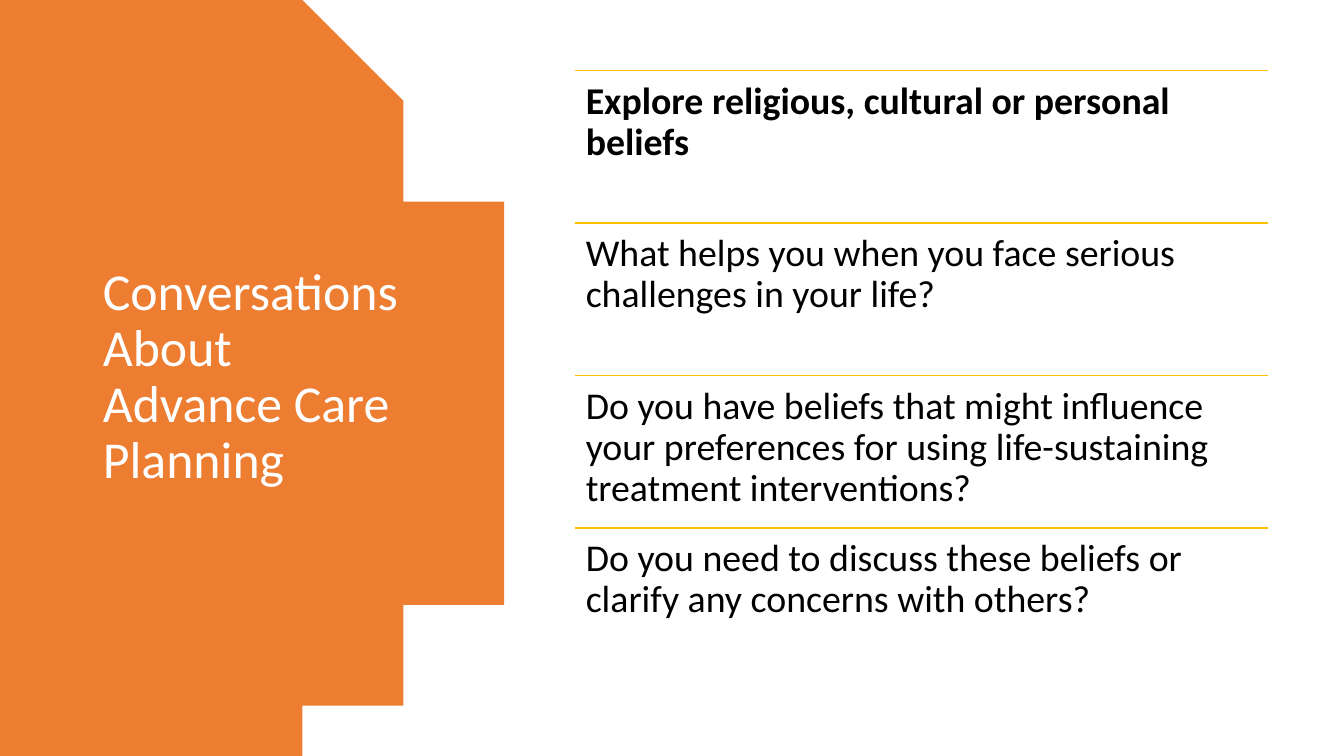
import dataclasses

import pptx
import pptx.dml.color
import pptx.enum.shapes
import pptx.enum.text
import pptx.oxml
import pptx.oxml.ns
import pptx.util
from pptx.util import Inches


@dataclasses.dataclass(frozen=True)
class Theme:
    """Hold the colours, font and type sizes of the slide."""
    disc: str = "ED7D31"
    rule: str = "FFC000"
    light: str = "FFFFFF"
    dark: str = "000000"
    font: str = "Calibri"
    head: int = 37
    body: int = 27


THEME = Theme()
TITLE = "Conversations About Advance Care Planning"
ITEMS = [
    "Explore religious, cultural or personal beliefs",
    "What helps you when you face serious challenges in your life?",
    "Do you have beliefs that might influence your preferences for using "
    "life-sustaining treatment interventions?",
    "Do you need to discuss these beliefs or clarify any concerns with others?",
]
LEFT, TOP, WIDTH, PITCH = 5.7, 0.7, 6.88, 1.513


def paint(code):
    """Turn a hex code into a colour."""
    return pptx.dml.color.RGBColor.from_string(code)


def style(frame, size, code, bold=False):
    """Format the text of a frame."""
    frame.word_wrap = True
    for para in frame.paragraphs:
        para.line_spacing = 0.9
        for run in para.runs:
            run.font.name = THEME.font
            run.font.size = pptx.util.Pt(size)
            run.font.bold = bold
            run.font.color.rgb = paint(code)


def curve(start, pull, push, end, steps=40):
    """Sample a cubic curve between two points."""
    spots = []
    for step in range(steps + 1):
        t = step / steps
        u = 1 - t
        mix = (u ** 3, 3 * u * u * t, 3 * u * t * t, t ** 3)
        spots.append(tuple(
            sum(m * p[axis] for m, p in zip(mix, (start, pull, push, end)))
            for axis in (0, 1)))
    return spots


def add_disc(slide):
    """Draw the cut disc behind the title."""
    upper = curve((2.83, 0), (4.09, 0.77), (4.93, 2.16), (4.93, 3.75))
    lower = [(x, 7.5 - y) for x, y in reversed(upper[:-1])]
    build = slide.shapes.build_freeform(0, 0, scale=Inches(1))
    build.add_line_segments(upper + lower + [(0, 7.5)], close=True)
    disc = build.convert_to_shape()
    disc.shadow.inherit = False
    disc.fill.solid()
    disc.fill.fore_color.rgb = paint(THEME.disc)
    disc.line.fill.background()
    slide.shapes.element.insert(2, disc.element)


def add_title(slide):
    """Place and format the title."""
    title = slide.shapes.title
    title.left, title.top = Inches(0.92), Inches(0.7)
    title.width, title.height = Inches(3.23), Inches(6.09)
    frame = title.text_frame
    frame.text = TITLE
    frame.vertical_anchor = pptx.enum.text.MSO_ANCHOR.MIDDLE
    style(frame, THEME.head, THEME.light)
    frame.paragraphs[0].alignment = pptx.enum.text.PP_ALIGN.LEFT


def add_rule(slide, top):
    """Draw a thin line above an item."""
    rule = slide.shapes.add_connector(
        pptx.enum.shapes.MSO_CONNECTOR.STRAIGHT,
        Inches(LEFT), Inches(top), Inches(LEFT + WIDTH), Inches(top))
    rule.line.color.rgb = paint(THEME.rule)
    rule.line.width = pptx.util.Pt(1)
    props = rule.element.find(pptx.oxml.ns.qn("p:spPr"))
    props.append(pptx.oxml.parse_xml(
        "<a:effectLst %s/>" % pptx.oxml.ns.nsdecls("a")))


def add_item(slide, text, top, bold):
    """Write one item below its line."""
    box = slide.shapes.add_textbox(
        Inches(LEFT), Inches(top), Inches(WIDTH), Inches(PITCH))
    frame = box.text_frame
    frame.margin_left = frame.margin_right = Inches(0.11)
    frame.margin_top = frame.margin_bottom = Inches(0.11)
    frame.text = text
    style(frame, THEME.body, THEME.dark, bold)


def main():
    """Build the slide and save it."""
    deck = pptx.Presentation()
    deck.slide_width, deck.slide_height = Inches(13.33), Inches(7.5)
    slide = deck.slides.add_slide(deck.slide_layouts[5])
    add_disc(slide)
    add_title(slide)
    for index, text in enumerate(ITEMS):
        top = TOP + index * PITCH
        add_rule(slide, top)
        add_item(slide, text, top, bold=index == 0)
    deck.save("out.pptx")


if __name__ == "__main__":
    main()
